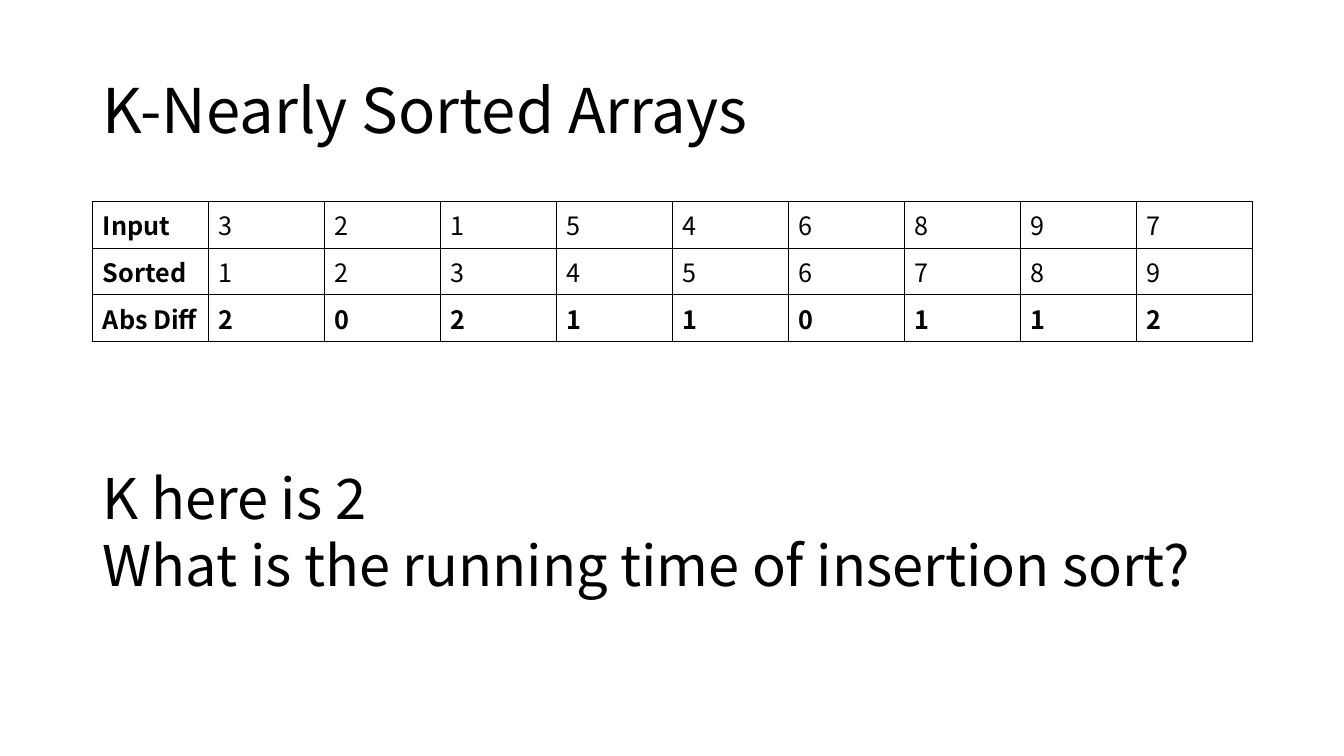
from dataclasses import dataclass

from lxml import etree
from pptx import Presentation
from pptx.dml.color import RGBColor
from pptx.enum.text import MSO_ANCHOR, MSO_AUTO_SIZE, PP_ALIGN
from pptx.oxml.ns import qn
from pptx.util import Inches, Pt

LEFT, MIDDLE, TOP = PP_ALIGN.LEFT, MSO_ANCHOR.MIDDLE, MSO_ANCHOR.TOP
NO_AUTOFIT = MSO_AUTO_SIZE.NONE
FONT = "Noto Sans CJK KR"
COLORS = {"ink": "000000", "paper": "FFFFFF"}
MARGIN, CONTENT_WIDTH = 0.92, 11.5
ROW_HEIGHT, BORDER_WIDTH = 0.41, 1


@dataclass
class ArrayRow:
    label: str
    values: list[int]
    bold: bool = False


def format_text(frame, size: int, bold: bool = False, spacing: float = 1.0) -> None:
    for paragraph in frame.paragraphs:
        paragraph.alignment = LEFT
        paragraph.line_spacing = spacing
        for run in paragraph.runs:
            run.font.name = FONT
            run.font.size = Pt(size)
            run.font.bold = bold
            run.font.color.rgb = RGBColor.from_string(COLORS["ink"])


def add_borders(cell) -> None:
    properties = cell._tc.get_or_add_tcPr()
    for side in ("a:lnL", "a:lnR", "a:lnT", "a:lnB"):
        line = etree.SubElement(properties, qn(side), w=str(Pt(BORDER_WIDTH)))
        fill = etree.SubElement(line, qn("a:solidFill"))
        etree.SubElement(fill, qn("a:srgbClr"), val=COLORS["ink"])


def add_array_table(slide, rows: list[ArrayRow]) -> None:
    column_count = len(rows[0].values) + 1
    table = slide.shapes.add_table(
        len(rows), column_count, Inches(MARGIN), Inches(2),
        Inches(CONTENT_WIDTH), Inches(ROW_HEIGHT * len(rows))).table
    table.first_row = False
    table.horz_banding = False
    for column in table.columns:
        column.width = Inches(CONTENT_WIDTH / column_count)
    for table_row, row in zip(table.rows, rows):
        table_row.height = Inches(ROW_HEIGHT)
        for index, (cell, entry) in enumerate(zip(table_row.cells, [row.label, *row.values])):
            cell.text_frame.text = str(entry)
            format_text(cell.text_frame, 18, bold=row.bold or index == 0)
            add_borders(cell)
            cell.fill.solid()
            cell.fill.fore_color.rgb = RGBColor.from_string(COLORS["paper"])


def main() -> None:
    presentation = Presentation()
    presentation.slide_width = Inches(13.33)
    presentation.slide_height = Inches(7.5)
    slide = presentation.slides.add_slide(presentation.slide_layouts[5])

    title = slide.shapes.title
    title.left, title.top = Inches(MARGIN), Inches(0.4)
    title.width, title.height = Inches(CONTENT_WIDTH), Inches(1.45)
    title.text_frame.text = "K-Nearly Sorted Arrays"
    title.text_frame.vertical_anchor = MIDDLE
    title.text_frame.auto_size = NO_AUTOFIT
    format_text(title.text_frame, 44, spacing=0.9)

    array = [3, 2, 1, 5, 4, 6, 8, 9, 7]
    ordered = sorted(array)
    differences = [abs(value - target) for value, target in zip(array, ordered)]
    add_array_table(slide, [
        ArrayRow("Input", array),
        ArrayRow("Sorted", ordered),
        ArrayRow("Abs Diff", differences, bold=True),
    ])

    question = slide.shapes.add_textbox(
        Inches(MARGIN), Inches(4.55), Inches(11.78), Inches(1.45)).text_frame
    question.word_wrap = True
    question.vertical_anchor = TOP
    question.auto_size = MSO_AUTO_SIZE.SHAPE_TO_FIT_TEXT
    question.text = "K here is 2\nWhat is the running time of insertion sort?"
    format_text(question, 40)

    presentation.save("out.pptx")


if __name__ == "__main__":
    main()
